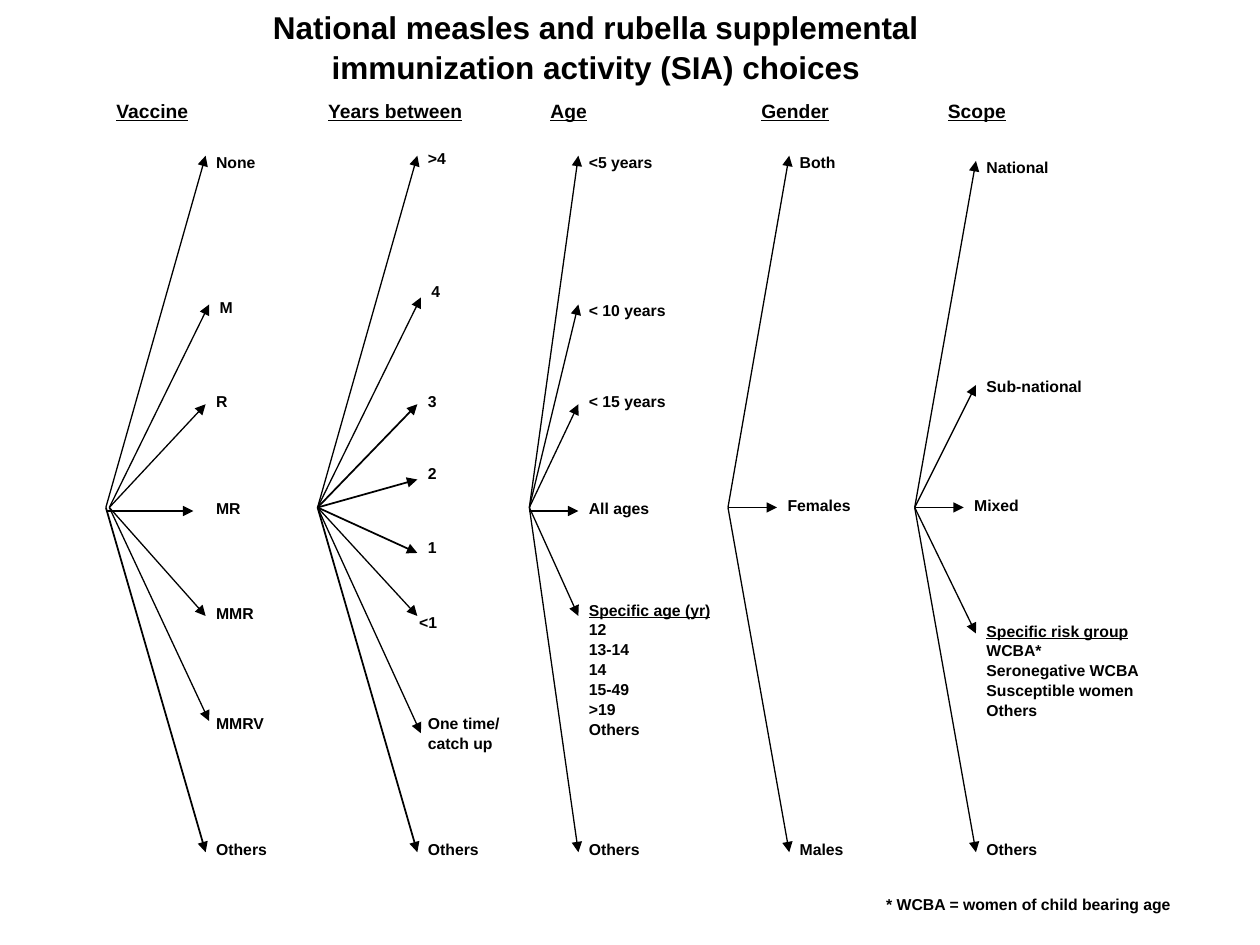
from dataclasses import dataclass
from lxml.etree import SubElement
from pptx import Presentation
from pptx.dml.color import RGBColor as RGB
from pptx.enum.shapes import MSO_CONNECTOR as Link
from pptx.enum.text import MSO_ANCHOR as Anchor, MSO_AUTO_SIZE as Fit, PP_ALIGN as Align
from pptx.oxml.ns import qn
from pptx.util import Pt

HUES = {"ink": "000000"}
FONT = "Arial"
HEAD, BODY = 11, 9
TOP = 53
HIGH, UP, NEAR, HUB, LOW, END = 36, 121, 178, 237, 299, 434


@dataclass
class Arm:
    tip: float
    text: str
    shift: float = 0
    gap: float = 0
    drop: float = 0
    bold: bool = False


@dataclass
class Col:
    left: float
    reach: float
    head: str
    inset: float
    arms: list
    dent: float = 0


AGES = "Specific age (yr)\n12\n13-14\n14\n15-49\n>19\nOthers"
RISKS = "Specific risk group\nWCBA*\nSeronegative WCBA\nSusceptible women\nOthers"

COLS = [
    Col(60.5, 57, "Vaccine", 0, [
        Arm(HIGH, "None"),
        Arm(UP, "M", shift=2, drop=3),
        Arm(NEAR, "R"),
        Arm(HUB + 2, "MR", shift=-7, gap=7),
        Arm(LOW, "MMR"),
        Arm(359, "MMRV", shift=2, gap=-2, drop=3),
        Arm(END, "Others", bold=True),
    ], dent=2),
    Col(181.5, 57, "Years between", 0, [
        Arm(HIGH, ">4", drop=-2),
        Arm(117, "4", shift=2, drop=-2),
        Arm(NEAR, "3", bold=True),
        Arm(221, "2", drop=-2, bold=True),
        Arm(263, "1", drop=-2, bold=True),
        Arm(LOW, "<1", gap=-5, drop=5),
        Arm(366, "One time/\ncatch up", shift=2, gap=-2, drop=-4),
        Arm(END, "Others", bold=True),
    ]),
    Col(302.5, 28, "Age", 6, [
        Arm(HIGH, "<5 years"),
        Arm(UP, "< 10 years", drop=5),
        Arm(NEAR, "< 15 years"),
        Arm(HUB + 2, "All ages"),
        Arm(LOW, AGES, drop=-2),
        Arm(END, "Others"),
    ]),
    Col(416, 35, "Gender", 13, [
        Arm(HIGH, "Both"),
        Arm(HUB, "Females", shift=-7),
        Arm(END, "Males"),
    ]),
    Col(522.7, 35, "Scope", 13, [
        Arm(39, "National"),
        Arm(167, "Sub-national", drop=2),
        Arm(HUB, "Mixed", shift=-7),
        Arm(309, RISKS),
        Arm(END, "Others"),
    ]),
]


def add_run(para, text, size, under=False):
    para.line_spacing = 1.05
    run = para.add_run()
    run.text = text
    font = run.font
    font.name, font.size, font.bold = FONT, Pt(size), True
    font.underline = under
    font.color.rgb = RGB.from_string(HUES["ink"])


def add_text(slide, left, top, text, size=BODY, under=False):
    lines = text.split("\n")
    wide = size * (0.6 * max(map(len, lines)) + 2.5)
    high = size * 1.45 * len(lines) + 6
    frame = slide.shapes.add_textbox(*map(Pt, (left, top, wide, high))).text_frame
    frame.word_wrap = True
    frame.auto_size = Fit.NONE
    frame.vertical_anchor = Anchor.TOP
    frame.margin_left = frame.margin_right = Pt(6)
    frame.margin_top = frame.margin_bottom = Pt(3)
    for i, line in enumerate(lines):
        para = frame.add_paragraph() if i else frame.paragraphs[0]
        add_run(para, line, size, under and i == 0)


def add_arrow(slide, start, tip, bold):
    link = slide.shapes.add_connector(Link.STRAIGHT, *map(Pt, start + tip))
    link.line.color.rgb = RGB.from_string(HUES["ink"])
    link.line.width = Pt(1 if bold else 0.75)
    SubElement(link.line._get_or_add_ln(), qn("a:tailEnd"), type="triangle")
    SubElement(link._element.spPr, qn("a:effectLst"))


def add_title(slide, box, text):
    title = slide.shapes.title
    title.left, title.top, title.width, title.height = map(Pt, box)
    frame = title.text_frame
    frame.word_wrap = True
    frame.auto_size = Fit.NONE
    frame.vertical_anchor = Anchor.TOP
    para = frame.paragraphs[0]
    para.alignment = Align.CENTER
    add_run(para, text, 18)


def add_col(slide, col, top):
    add_text(slide, col.left + col.inset, top, col.head, HEAD, True)
    for arm in col.arms:
        flat = abs(arm.tip - HUB) < 3
        first, last = arm is col.arms[0], arm is col.arms[-1]
        dent = 0 if flat or first or last else col.dent
        start = (col.left + dent, top + (arm.tip if flat else HUB))
        tip = (col.left + col.reach + arm.shift, top + arm.tip)
        add_arrow(slide, start, tip, arm.bold)
        rise = 5.5 if first else 10.5
        add_text(slide, tip[0] + arm.gap, tip[1] - rise + arm.drop, arm.text,
                 under=arm.text in (AGES, RISKS))


def main():
    deck = Presentation()
    deck.slide_width, deck.slide_height = Pt(720), Pt(540)
    slide = deck.slides.add_slide(deck.slide_layouts[5])
    add_title(slide, (111, 0, 459, 66),
              "National measles and rubella supplemental immunization activity (SIA) choices")
    for col in COLS:
        add_col(slide, col, TOP)
    add_text(slide, 500.4, 508, "* WCBA = women of child bearing age")
    deck.save("out.pptx")


if __name__ == "__main__":
    main()
